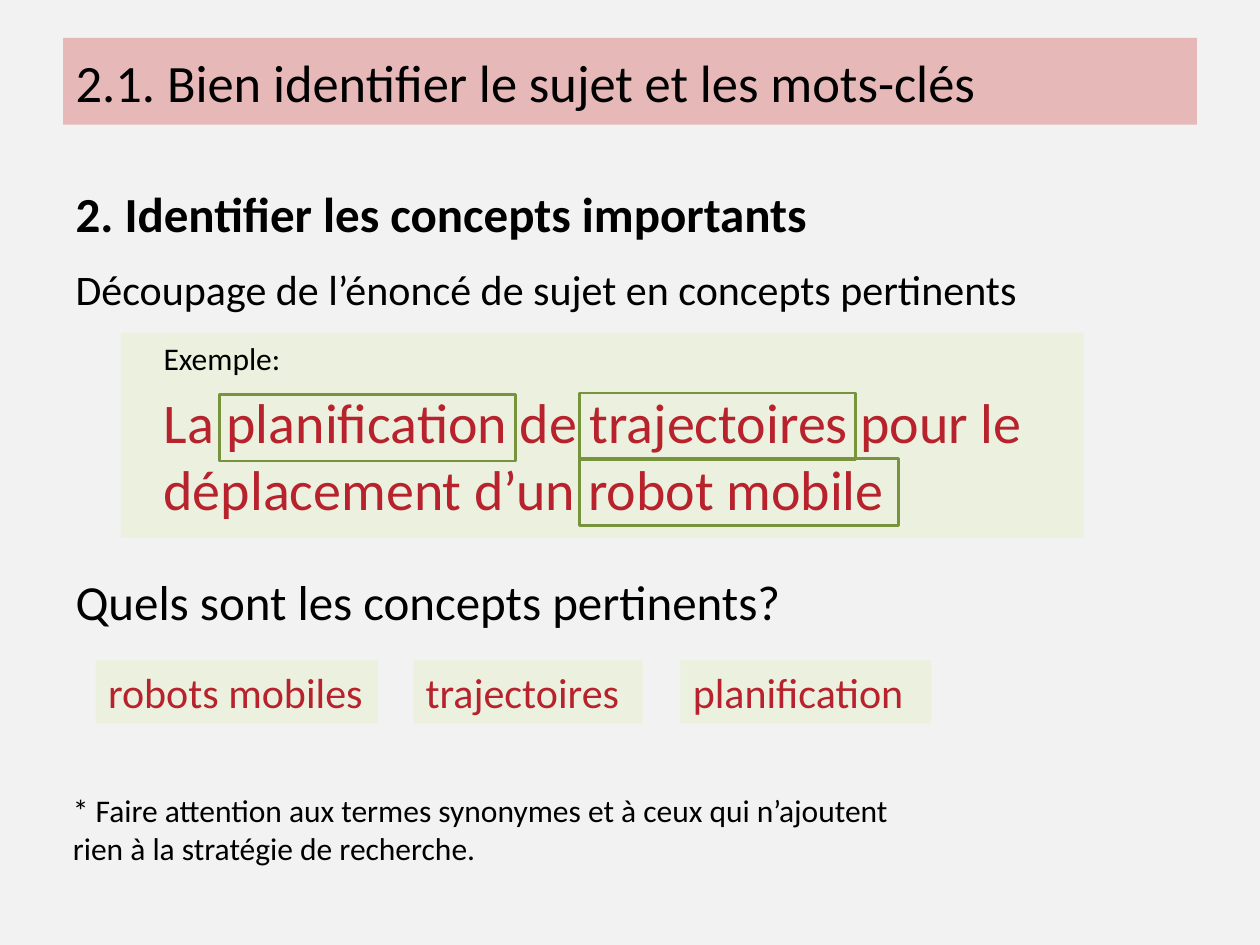
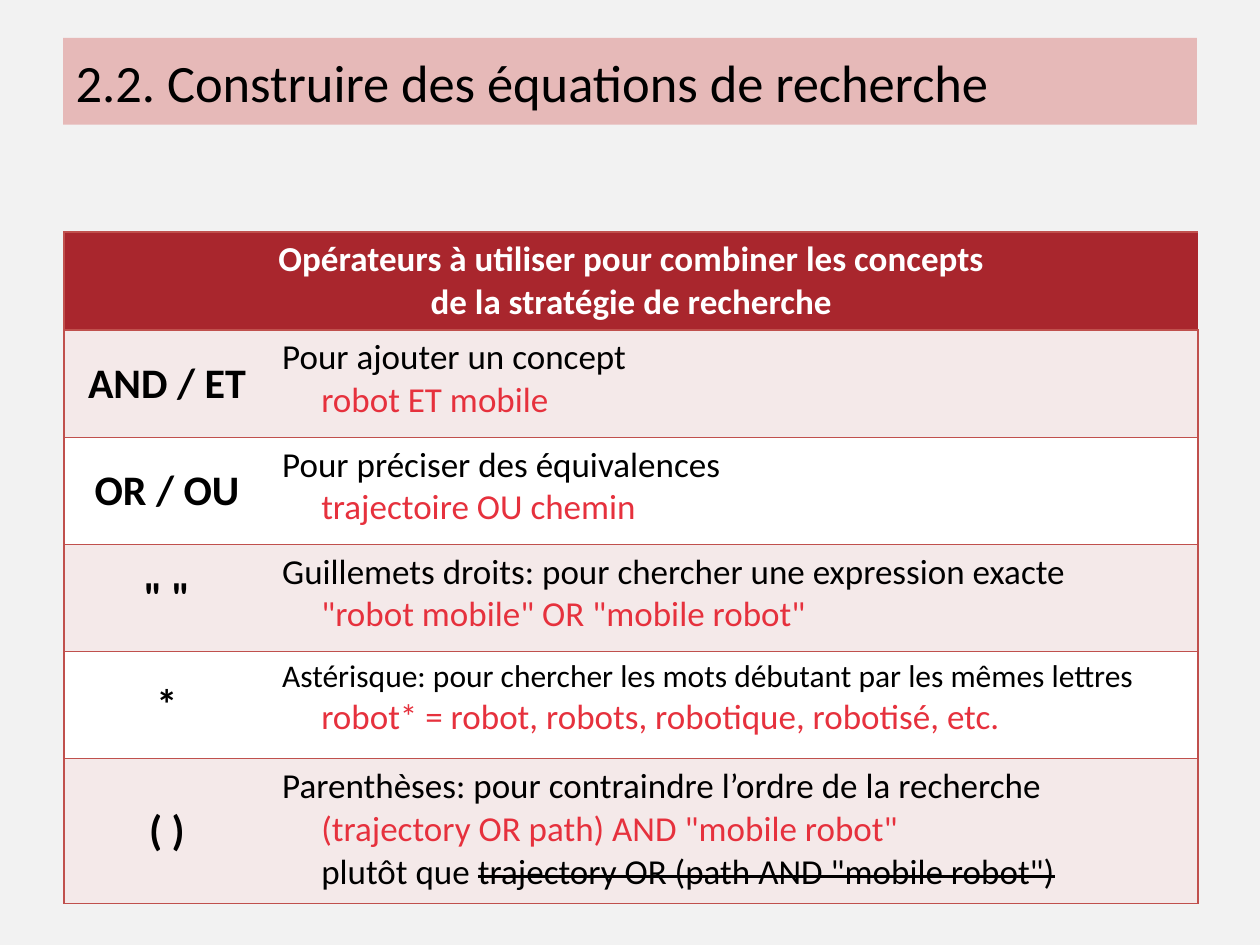
import lxml.etree
import pptx
import pptx.dml.color
import pptx.enum.shapes
import pptx.enum.text
import pptx.oxml.ns
import pptx.util

Inches = pptx.util.Inches
Pt = pptx.util.Pt
RGBColor = pptx.dml.color.RGBColor
Align = pptx.enum.text.PP_ALIGN
Anchor = pptx.enum.text.MSO_ANCHOR
qn = pptx.oxml.ns.qn

BACKGROUND = RGBColor(0xF2, 0xF2, 0xF2)
TITLE_BAND = RGBColor(0xE6, 0xB9, 0xB8)
PALE_GREEN = RGBColor(0xEB, 0xF1, 0xDE)
GREEN = RGBColor(0x77, 0x93, 0x3C)
CRIMSON = RGBColor(0xB7, 0x22, 0x2D)
HEADER_RED = RGBColor(0xA9, 0x26, 0x2D)
EXAMPLE_RED = RGBColor(0xE6, 0x31, 0x3D)
BORDER_RED = RGBColor(0xC0, 0x50, 0x4D)
PALE_PINK = RGBColor(0xF4, 0xE9, 0xE9)
WHITE = RGBColor(0xFF, 0xFF, 0xFF)
BLACK = RGBColor(0, 0, 0)
FONT = "Calibri"
TITLE_ONLY = 5
TITLE_AND_CONTENT = 1


def write(text_frame, text, size=20, color=BLACK, bold=False, align=Align.LEFT,
          before=0, after=0, indent=0, strike=False, same_line=False):
    paragraph = text_frame.paragraphs[-1]
    if not same_line:
        if paragraph.runs:
            paragraph = text_frame.add_paragraph()
        properties = paragraph._p.get_or_add_pPr()
        properties.set("marL", str(Inches(indent)))
        properties.set("indent", "0")
        lxml.etree.SubElement(properties, qn("a:buNone"))
        paragraph.alignment = align
        paragraph.space_before = Pt(before)
        paragraph.space_after = Pt(after)
    for index, line in enumerate(text.split("\n")):
        if index:
            paragraph.add_line_break()
        run = paragraph.add_run()
        run.text = line
        run.font.name = FONT
        run.font.size = Pt(size)
        run.font.bold = bold
        run.font.color.rgb = color
        if strike:
            run._r.get_or_add_rPr().set("strike", "sngStrike")


def set_borders(cell, visible_sides):
    properties = cell._tc.get_or_add_tcPr()
    for position, side in enumerate("LRTB"):
        line = lxml.etree.Element(qn("a:ln" + side), w=str(Pt(1)))
        if side in visible_sides:
            fill = lxml.etree.SubElement(line, qn("a:solidFill"))
            lxml.etree.SubElement(fill, qn("a:srgbClr"), val=str(BORDER_RED))
        else:
            lxml.etree.SubElement(line, qn("a:noFill"))
        properties.insert(position, line)


class Deck:
    def __init__(self):
        self.presentation = pptx.Presentation()
        self.presentation.slide_width = Inches(10)
        self.presentation.slide_height = Inches(7.5)
        fill = self.presentation.slide_master.background.fill
        fill.solid()
        fill.fore_color.rgb = BACKGROUND
        self.slide = None

    def add_slide(self, layout, title):
        layouts = self.presentation.slide_layouts
        self.slide = self.presentation.slides.add_slide(layouts[layout])
        band = self.slide.shapes.title
        text_frame = self.place(band, 0.5, 0.3, 9, 0.69)
        band.fill.solid()
        band.fill.fore_color.rgb = TITLE_BAND
        text_frame.vertical_anchor = Anchor.MIDDLE
        write(text_frame, title, size=30)

    def place(self, shape, left, top, width, height):
        shape.left, shape.top = Inches(left), Inches(top)
        shape.width, shape.height = Inches(width), Inches(height)
        shape.text_frame.word_wrap = True
        shape.text_frame.auto_size = pptx.enum.text.MSO_AUTO_SIZE.NONE
        return shape.text_frame

    def body(self, left, top, width, height):
        return self.place(self.slide.placeholders[1], left, top, width, height)

    def text_box(self, left, top, width, height):
        box = self.slide.shapes.add_textbox(0, 0, 0, 0)
        return self.place(box, left, top, width, height)

    def rectangle(self, left, top, width, height, fill=None, line=None):
        shape = self.slide.shapes.add_shape(
            pptx.enum.shapes.MSO_SHAPE.RECTANGLE, 0, 0, 0, 0)
        shape.shadow.inherit = False
        if fill is None:
            shape.fill.background()
        else:
            shape.fill.solid()
            shape.fill.fore_color.rgb = fill
        if line is None:
            shape.line.fill.background()
        else:
            shape.line.color.rgb = line
            shape.line.width = Pt(1.5)
        text_frame = self.place(shape, left, top, width, height)
        text_frame.vertical_anchor = Anchor.TOP
        return text_frame

    def table(self, left, top, widths, heights):
        table = self.slide.shapes.add_table(
            len(heights), len(widths), Inches(left), Inches(top),
            Inches(sum(widths)), Inches(sum(heights))).table
        table.horz_banding = False
        for column, width in zip(table.columns, widths):
            column.width = Inches(width)
        for row, height in zip(table.rows, heights):
            row.height = Inches(height)
        return table

    def cell(self, table, row, column, fill):
        cell = table.cell(row, column)
        cell.fill.solid()
        cell.fill.fore_color.rgb = fill
        set_borders(cell, "RTB" if column else "LTB")
        return cell


def add_concepts_slide(deck):
    deck.add_slide(TITLE_AND_CONTENT, "2.1. Bien identifier le sujet et les mots-clés")
    body = deck.body(0.5, 1.41, 9, 5.72)
    write(body, "2. Identifier les concepts importants", size=28, bold=True, after=12)
    write(body, "Découpage de l’énoncé de sujet en concepts pertinents", size=24)
    write(body, "Quels sont les concepts pertinents?", size=28, before=147)

    example = deck.rectangle(0.96, 2.64, 7.64, 1.63, fill=PALE_GREEN)
    write(example, "Exemple:", size=18, indent=0.24)
    write(example, "La planification de trajectoires pour le déplacement d’un robot mobile",
          size=32, color=CRIMSON, before=6, indent=0.24)

    for left, width, concept in ((0.76, 2.24, "robots mobiles"),
                                 (3.28, 1.82, "trajectoires"),
                                 (5.4, 1.99, "planification")):
        chip = deck.rectangle(left, 5.24, width, 0.5, fill=PALE_GREEN)
        write(chip, concept, size=24, color=CRIMSON)

    for left, top, width in ((4.6, 3.64, 2.53), (4.6, 3.12, 2.19), (1.74, 3.13, 2.35)):
        deck.rectangle(left, top, width, 0.53, line=GREEN)

    note = deck.text_box(0.48, 6.23, 6.72, 0.71)
    write(note, "* Faire attention aux termes synonymes et à ceux qui n’ajoutent\n"
                "rien à la stratégie de recherche.", size=18)


def add_operators_slide(deck):
    deck.add_slide(TITLE_ONLY, "2.2. Construire des équations de recherche")
    operators = (
        ("AND / ET", "Pour ajouter un concept", 20, "robot ET mobile"),
        ("OR / OU", "Pour préciser des équivalences", 20, "trajectoire OU chemin"),
        ('" "', "Guillemets droits: pour chercher une expression exacte", 20,
         '"robot mobile" OR "mobile robot"'),
        ("*", "Astérisque: pour chercher les mots débutant par les mêmes lettres", 18,
         "robot* = robot, robots, robotique, robotisé, etc."),
        ("( )", "Parenthèses: pour contraindre l’ordre de la recherche", 20,
         '(trajectory OR path) AND "mobile robot"'),
    )
    table = deck.table(0.51, 1.84, (1.63, 7.37), (0.76, 0.85, 0.85, 0.85, 0.85, 1.15))
    header = deck.cell(table, 0, 0, HEADER_RED)
    header.merge(deck.cell(table, 0, 1, HEADER_RED))
    for line in ("Opérateurs à utiliser pour combiner les concepts",
                 "de la stratégie de recherche"):
        write(header.text_frame, line, color=WHITE, bold=True, align=Align.CENTER)

    for row, (operator, purpose, size, example) in enumerate(operators, start=1):
        fill = PALE_PINK if row % 2 else WHITE
        operator_cell = deck.cell(table, row, 0, fill)
        operator_cell.vertical_anchor = Anchor.MIDDLE
        write(operator_cell.text_frame, operator, size=24, bold=True, align=Align.CENTER)
        usage = deck.cell(table, row, 1, fill).text_frame
        write(usage, purpose, size=size)
        write(usage, example, color=EXAMPLE_RED, indent=0.31)
    write(usage, "plutôt que ", indent=0.31)
    write(usage, 'trajectory OR (path AND "mobile robot")', strike=True, same_line=True)


def main():
    deck = Deck()
    add_concepts_slide(deck)
    add_operators_slide(deck)
    deck.presentation.save("out.pptx")


if __name__ == "__main__":
    main()
